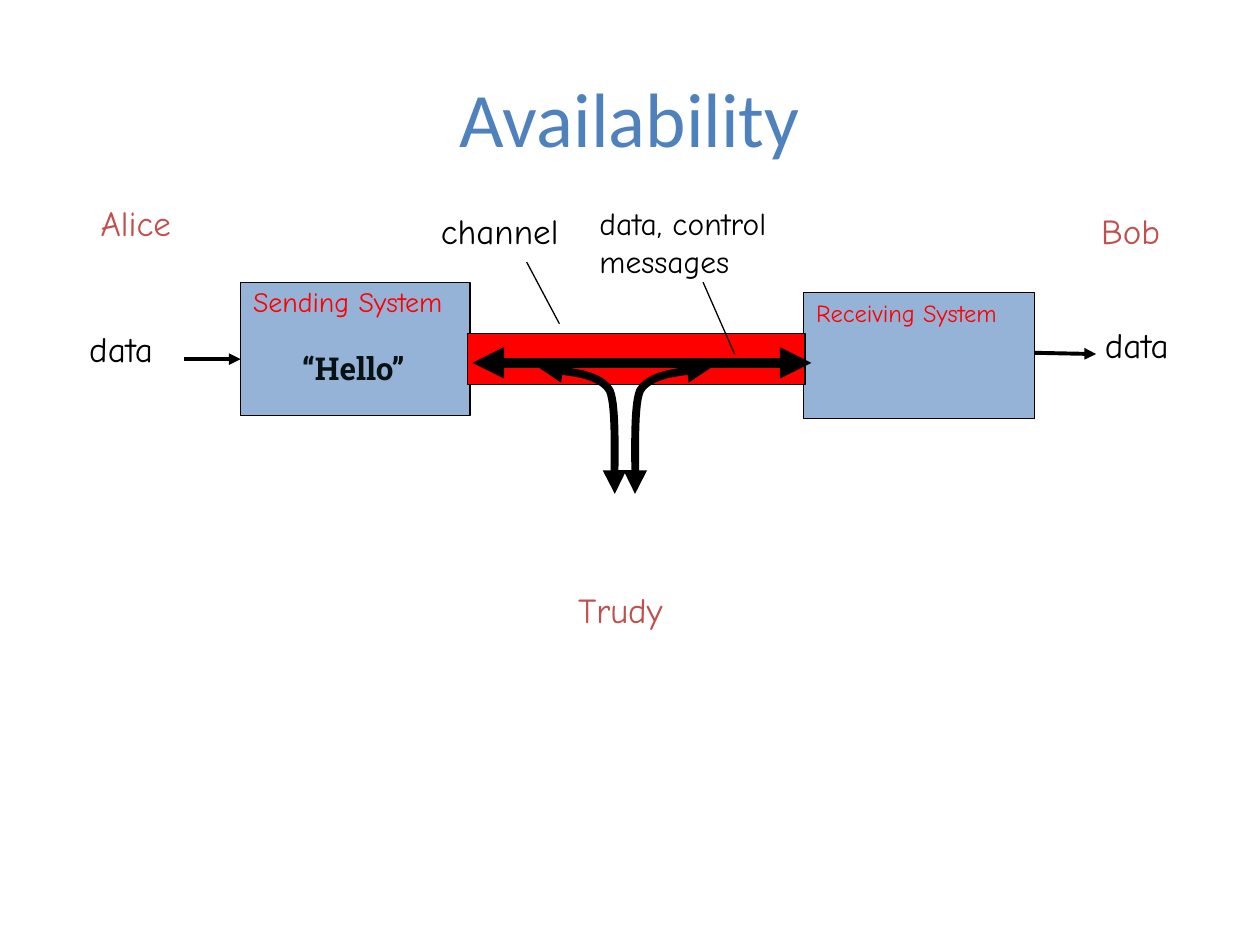
from dataclasses import dataclass

from lxml.etree import SubElement
from pptx import Presentation
from pptx.dml.color import RGBColor
from pptx.enum.shapes import MSO_CONNECTOR as Connector, MSO_SHAPE as Shape
from pptx.enum.text import MSO_ANCHOR as Anchor, PP_ALIGN as Align
from pptx.oxml.ns import qn
from pptx.util import Inches, Pt


@dataclass(frozen=True)
class Theme:
    heading: str = "Calibri"
    hand: str = "Comic Neue"
    slab: str = "Roboto Slab"
    title: str = "4F81BD"
    person: str = "C0504D"
    system: str = "95B3D7"
    channel: str = "FF0000"
    ink: str = "000000"
    message: str = "071215"
    title_size: float = 44
    label_size: float = 20
    note_size: float = 18
    sender_size: float = 16
    receiver_size: float = 14
    thin: float = 0.75
    arrow: float = 2.25
    tap: float = 4.5
    flow: float = 6


THEME = Theme()


def color(value):
    return RGBColor.from_string(value)


def write(frame, text, font, size, ink, bold=False, align=Align.LEFT):
    frame.word_wrap = True
    para = frame.paragraphs[0]
    para.alignment = align
    span = para.add_run()
    span.text = text
    span.font.name = font
    span.font.size = Pt(size)
    span.font.bold = bold
    span.font.color.rgb = color(ink)


def add_title(page, text):
    title = page.shapes.title
    title.left, title.top = Inches(0.5), Inches(0.3)
    title.width, title.height = Inches(9), Inches(1.25)
    title.text_frame.vertical_anchor = Anchor.MIDDLE
    write(title.text_frame, text, THEME.heading, THEME.title_size,
          THEME.title, align=Align.CENTER)


def add_label(page, text, left, top, width, height=0.5, font=THEME.hand,
              size=THEME.label_size, ink=THEME.ink, bold=False):
    box = page.shapes.add_textbox(
        Inches(left), Inches(top), Inches(width), Inches(height))
    write(box.text_frame, text, font, size, ink, bold)


def add_block(page, left, top, width, height, fill):
    block = page.shapes.add_shape(
        Shape.RECTANGLE, Inches(left), Inches(top), Inches(width), Inches(height))
    block.shadow.inherit = False
    block.fill.solid()
    block.fill.fore_color.rgb = color(fill)
    block.line.color.rgb = color(THEME.ink)
    block.line.width = Pt(THEME.thin)
    return block


def add_system(page, name, left, top, width, height, size, inset):
    frame = add_block(page, left, top, width, height, THEME.system).text_frame
    frame.vertical_anchor = Anchor.TOP
    frame.margin_top = Inches(inset)
    write(frame, name, THEME.hand, size, THEME.channel)


def style_stroke(stroke, width, arrows):
    """Set ink, width and arrowheads; arrows holds "headEnd" and/or "tailEnd"."""
    stroke.line.color.rgb = color(THEME.ink)
    stroke.line.width = Pt(width)
    outline = stroke.line._get_or_add_ln()
    for end in arrows:
        SubElement(outline, qn(f"a:{end}"), type="triangle")


def add_line(page, start, end, width=THEME.thin, arrows=()):
    line = page.shapes.add_connector(
        Connector.STRAIGHT, *map(Inches, start), *map(Inches, end))
    style_stroke(line, width, arrows)
    SubElement(line._element.spPr, qn("a:effectLst"))


def curve_points(start, curves, steps=16):
    """Yield points along a chain of cubic curves, after its start."""
    for a, b, end in curves:
        for step in range(1, steps + 1):
            t = step / steps
            u = 1 - t
            weights = (u ** 3, 3 * u * u * t, 3 * u * t * t, t ** 3)
            yield tuple(
                Inches(sum(w * p[axis] for w, p in zip(weights, (start, a, b, end))))
                for axis in (0, 1))
        start = end


def add_tap(page, start_x, direction):
    """Draw a bent double arrow from the channel down to the intruder."""
    def place(dx, y):
        return start_x + direction * dx, y

    start = place(0, 2.92)
    curves = [
        (place(0.09, 2.95), place(0.46, 2.93), place(0.56, 3.1)),
        (place(0.62, 3.24), place(0.59, 3.75), place(0.6, 3.92)),
    ]
    builder = page.shapes.build_freeform(*map(Inches, start))
    builder.add_line_segments(list(curve_points(start, curves)), close=False)
    tap = builder.convert_to_shape()
    tap.shadow.inherit = False
    tap.fill.background()
    style_stroke(tap, THEME.tap, ("headEnd", "tailEnd"))


def main():
    deck = Presentation()
    deck.slide_width, deck.slide_height = Inches(10), Inches(7.5)
    page = deck.slides.add_slide(deck.slide_layouts[5])
    add_title(page, "Availability")

    add_system(page, "Sending System", 1.91, 2.24, 1.82, 1.06,
               THEME.sender_size, 0.02)
    add_system(page, "Receiving System", 6.38, 2.32, 1.83, 1,
               THEME.receiver_size, 0.05)

    add_label(page, "channel", 3.4, 1.61, 1.36)
    add_line(page, (4.18, 2.08), (4.44, 2.57))
    add_block(page, 3.71, 2.65, 2.68, 0.4, THEME.channel)
    add_line(page, (3.75, 2.88), (6.44, 2.88), THEME.flow, ("headEnd", "tailEnd"))
    add_label(page, "data, control messages", 4.66, 1.57, 2.07, 0.7,
              size=THEME.note_size)
    add_line(page, (5.58, 2.24), (5.83, 2.81))

    add_tap(page, 4.28, 1)
    add_tap(page, 5.64, -1)

    add_line(page, (1.46, 2.85), (1.91, 2.85), THEME.arrow, ("tailEnd",))
    add_label(page, "data", 0.61, 2.55, 0.89)
    add_line(page, (8.21, 2.8), (8.7, 2.81), THEME.arrow, ("tailEnd",))
    add_label(page, "data", 8.67, 2.52, 0.89)

    for name, left, top, width in (
            ("Alice", 0.7, 1.55, 0.98),
            ("Bob", 8.64, 1.61, 0.78),
            ("Trudy", 4.49, 4.62, 1.13)):
        add_label(page, name, left, top, width, ink=THEME.person)
    add_label(page, "“Hello”", 2.3, 2.72, 1.16, 0.4, THEME.slab,
              THEME.note_size, THEME.message, bold=True)

    deck.save("out.pptx")


if __name__ == "__main__":
    main()
